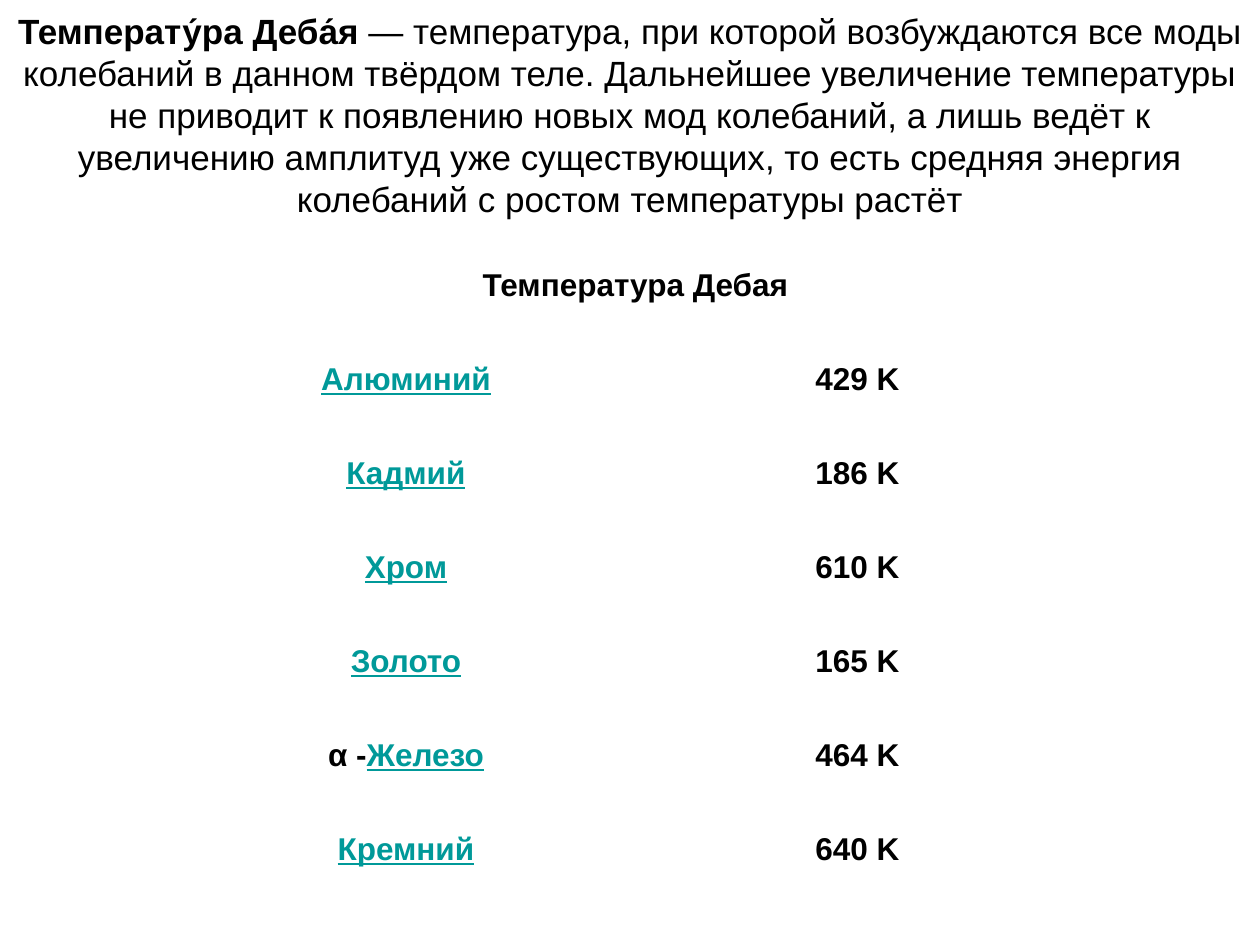
from dataclasses import dataclass

from lxml import etree
from pptx import Presentation
from pptx.dml.color import RGBColor
from pptx.enum.text import MSO_ANCHOR, PP_ALIGN
from pptx.oxml.ns import qn
from pptx.util import Emu, Pt

CENTER = PP_ALIGN.CENTER
TOP = MSO_ANCHOR.TOP
PX = 914400 // 126
BLANK_LAYOUT = 6


@dataclass(frozen=True)
class Theme:
    font: str = "Arial"
    paper: RGBColor = RGBColor(0xFF, 0xFF, 0xFF)
    ink: RGBColor = RGBColor(0x00, 0x00, 0x00)
    term: RGBColor = RGBColor(0x00, 0x99, 0x99)
    intro_size: Pt = Pt(20)
    table_size: Pt = Pt(18)
    border: Pt = Pt(1)
    header_rule: Pt = Pt(3)


THEME = Theme()
INTRO = (
    ("Температу́ра Деба́я", {"bold": True}),
    ("\u00a0— температура, при которой возбуждаются все моды колебаний в данном "
     "твёрдом теле. Дальнейшее увеличение температуры не приводит к появлению "
     "новых мод колебаний, а лишь ведёт к увеличению амплитуд уже существующих, "
     "то есть средняя энергия колебаний с ростом температуры растёт", {"bold": False}),
)
TABLE_TITLE = "Температура Дебая"
MATERIALS = (
    ("", "Алюминий", "429 K"),
    ("", "Кадмий", "186 K"),
    ("", "Хром", "610 K"),
    ("", "Золото", "165 K"),
    ("α -", "Железо", "464 K"),
    ("", "Кремний", "640 K"),
)
COLUMN_WIDTHS = (444, 459)
ROW_HEIGHT = 94
PLAIN = {"bold": True}
TERM = {"bold": True, "underline": True}


def px(*lengths):
    return [Emu(length * PX) for length in lengths]


def write_runs(paragraph, runs, size):
    paragraph.alignment = CENTER
    for text, style in runs:
        run = paragraph.add_run()
        run.text = text
        for attribute, value in {"name": THEME.font, "size": size, **style}.items():
            setattr(run.font, attribute, value)
        run.font.color.rgb = THEME.term if style.get("underline") else THEME.ink


def set_borders(cell, bottom):
    properties = cell._tc.get_or_add_tcPr()
    widths = {"a:lnL": THEME.border, "a:lnR": THEME.border,
              "a:lnT": THEME.border, "a:lnB": bottom}
    for position, (tag, width) in enumerate(widths.items()):
        line = etree.Element(qn(tag), w=str(width))
        fill = etree.SubElement(line, qn("a:solidFill"))
        etree.SubElement(fill, qn("a:srgbClr"), val=str(THEME.paper))
        properties.insert(position, line)


def fill_cell(cell, runs, bottom=THEME.border):
    cell.fill.solid()
    cell.fill.fore_color.rgb = THEME.paper
    cell.vertical_anchor = TOP
    set_borders(cell, bottom)
    write_runs(cell.text_frame.paragraphs[0], runs, THEME.table_size)


def add_intro(slide):
    intro = slide.shapes.add_textbox(*px(0, 3, 1260, 224))
    intro.fill.solid()
    intro.fill.fore_color.rgb = THEME.paper
    intro.text_frame.word_wrap = True
    write_runs(intro.text_frame.paragraphs[0], INTRO, THEME.intro_size)


def add_materials(slide):
    row_count = len(MATERIALS) + 1
    frame = slide.shapes.add_table(
        row_count, len(COLUMN_WIDTHS),
        *px(184, 262, sum(COLUMN_WIDTHS), ROW_HEIGHT * row_count))
    table = frame.table
    for column, width in zip(table.columns, px(*COLUMN_WIDTHS)):
        column.width = width
    heading = table.cell(0, 0)
    heading.merge(table.cell(0, 1))
    fill_cell(heading, [(TABLE_TITLE, PLAIN)], THEME.header_rule)
    for row, (prefix, material, temperature) in enumerate(MATERIALS, start=1):
        name_runs = [(prefix, PLAIN)] if prefix else []
        fill_cell(table.cell(row, 0), name_runs + [(material, TERM)])
        fill_cell(table.cell(row, 1), [(temperature, PLAIN)])


def main():
    presentation = Presentation()
    presentation.slide_width, presentation.slide_height = px(1260, 945)
    slide = presentation.slides.add_slide(presentation.slide_layouts[BLANK_LAYOUT])
    add_materials(slide)
    add_intro(slide)
    presentation.save("out.pptx")


if __name__ == "__main__":
    main()
